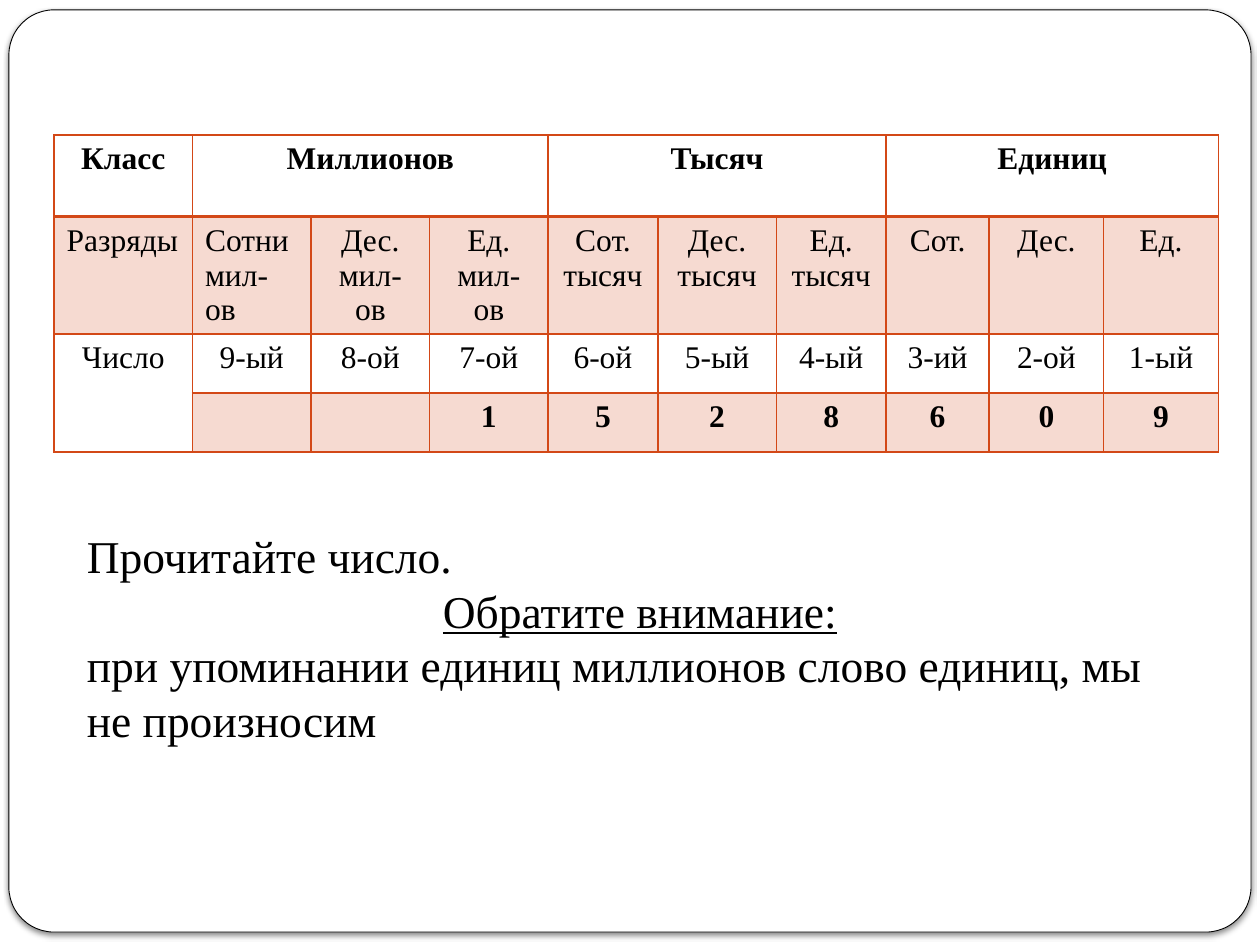
"""Build a slide with the place-value table of a seven-digit number and a reading hint."""
from dataclasses import dataclass

from lxml import etree
from pptx import Presentation
from pptx.dml.color import RGBColor
from pptx.enum.shapes import MSO_SHAPE
from pptx.enum.text import PP_ALIGN
from pptx.oxml.ns import qn
from pptx.util import Cm, Pt

LEFT, CENTER = PP_ALIGN.LEFT, PP_ALIGN.CENTER
ROUNDED = MSO_SHAPE.ROUNDED_RECTANGLE


@dataclass(frozen=True)
class Theme:
    font: str = "Times New Roman"
    ink: str = "000000"
    paper: str = "FFFFFF"
    border: str = "D34817"
    band: str = "F6DAD1"
    table_size: float = 18
    hint_size: float = 26
    thin: float = 0.96
    thick: float = 1.98


@dataclass(frozen=True)
class Entry:
    text: str
    row: int
    col: int
    rows: int = 1
    cols: int = 1
    bold: bool = False
    align: PP_ALIGN = CENTER


THEME = Theme()
COLUMN_WIDTHS = (2.79, 2.39, 2.39, 2.39, 2.21, 2.39, 2.21, 2.08, 2.31, 2.31)
ROW_HEIGHTS = (1.65, 2.36, 1.19, 1.19)
CLASSES = ("Миллионов", "Тысяч", "Единиц")
PLACES = ("Сотни\nмил-ов", "Дес.\nмил-ов", "Ед.\nмил-ов",
          "Сот.\nтысяч", "Дес.\nтысяч", "Ед.\nтысяч", "Сот.", "Дес.", "Ед.")
ORDINALS = ("9-ый", "8-ой", "7-ой", "6-ой", "5-ый", "4-ый", "3-ий", "2-ой", "1-ый")
DIGITS = "1528609"


def write(frame, text: str, *, size: float, align: PP_ALIGN = LEFT, bold: bool = False,
          underline: bool = False, append: bool = False) -> None:
    for index, line in enumerate(text.split("\n")):
        paragraph = frame.add_paragraph() if index or append else frame.paragraphs[0]
        paragraph.alignment = align
        run = paragraph.add_run()
        run.text = line
        run.font.name = THEME.font
        run.font.size = Pt(size)
        run.font.bold = bold
        run.font.underline = underline
        run.font.color.rgb = RGBColor.from_string(THEME.ink)


def add_colour(parent, colour: str):
    return etree.SubElement(parent, qn("a:srgbClr"), val=colour)


def draw_frame(slide) -> None:
    frame = slide.shapes.add_shape(ROUNDED, Cm(0.18), Cm(0.2), Cm(25.04), Cm(18.59))
    frame.adjustments[0] = 0.049
    frame.fill.solid()
    frame.fill.fore_color.rgb = RGBColor.from_string(THEME.paper)
    frame.line.color.rgb = RGBColor.from_string(THEME.ink)
    frame.line.width = Pt(0.5)
    frame.shadow.inherit = False
    effects = frame._element.spPr.find(qn("a:effectLst"))
    shadow = etree.SubElement(effects, qn("a:outerShdw"), blurRad=str(Pt(3)),
                              dist=str(Pt(2)), dir="5400000", rotWithShape="0")
    etree.SubElement(add_colour(shadow, THEME.ink), qn("a:alpha"), val="50000")


def style_cell(cell, row: int, col: int) -> None:
    properties = cell._tc.get_or_add_tcPr()
    widths = {"lnL": THEME.thin, "lnR": THEME.thin,
              "lnT": THEME.thick if row == 1 else THEME.thin,
              "lnB": THEME.thick if row == 0 else THEME.thin}
    for side, width in widths.items():
        line = etree.SubElement(properties, qn(f"a:{side}"), w=str(Pt(width)))
        add_colour(etree.SubElement(line, qn("a:solidFill")), THEME.border)
    if row == 1 or (row == 3 and col > 0):
        cell.fill.solid()
        cell.fill.fore_color.rgb = RGBColor.from_string(THEME.band)
    else:
        cell.fill.background()


def table_entries() -> list[Entry]:
    entries = [Entry("Класс", 0, 0, bold=True), Entry("Разряды", 1, 0, align=LEFT),
               Entry("Число", 2, 0, rows=2)]
    entries += [Entry(name, 0, 1 + 3 * i, cols=3, bold=True) for i, name in enumerate(CLASSES)]
    entries += [Entry(place, 1, col, align=LEFT if col == 1 else CENTER)
                for col, place in enumerate(PLACES, 1)]
    entries += [Entry(ordinal, 2, col) for col, ordinal in enumerate(ORDINALS, 1)]
    first_digit = len(COLUMN_WIDTHS) - len(DIGITS)
    entries += [Entry(digit, 3, col, bold=True) for col, digit in enumerate(DIGITS, first_digit)]
    return entries


def draw_table(slide) -> None:
    table = slide.shapes.add_table(len(ROW_HEIGHTS), len(COLUMN_WIDTHS), Cm(1.09), Cm(2.72),
                                   Cm(sum(COLUMN_WIDTHS)), Cm(sum(ROW_HEIGHTS))).table
    table.first_row = table.horz_banding = False
    for column, width in zip(table.columns, COLUMN_WIDTHS):
        column.width = Cm(width)
    for row, height in enumerate(ROW_HEIGHTS):
        table.rows[row].height = Cm(height)
        for col in range(len(COLUMN_WIDTHS)):
            style_cell(table.cell(row, col), row, col)
    for entry in table_entries():
        cell = table.cell(entry.row, entry.col)
        if entry.rows * entry.cols > 1:
            cell.merge(table.cell(entry.row + entry.rows - 1, entry.col + entry.cols - 1))
        write(cell.text_frame, entry.text, size=THEME.table_size,
              align=entry.align, bold=entry.bold)


def draw_hint(slide) -> None:
    hint = slide.shapes.add_textbox(Cm(1.5), Cm(10.52), Cm(22.81), Cm(4.65)).text_frame
    hint.word_wrap = True
    write(hint, "Прочитайте число.", size=THEME.hint_size)
    write(hint, "Обратите внимание:", size=THEME.hint_size, align=CENTER,
          underline=True, append=True)
    write(hint, "при упоминании единиц миллионов слово единиц, мы не произносим",
          size=THEME.hint_size, append=True)


def main() -> None:
    deck = Presentation()
    deck.slide_width, deck.slide_height = Cm(25.4), Cm(19.05)
    slide = deck.slides.add_slide(deck.slide_layouts[6])
    draw_frame(slide)
    draw_table(slide)
    draw_hint(slide)
    deck.save("out.pptx")


if __name__ == "__main__":
    main()
